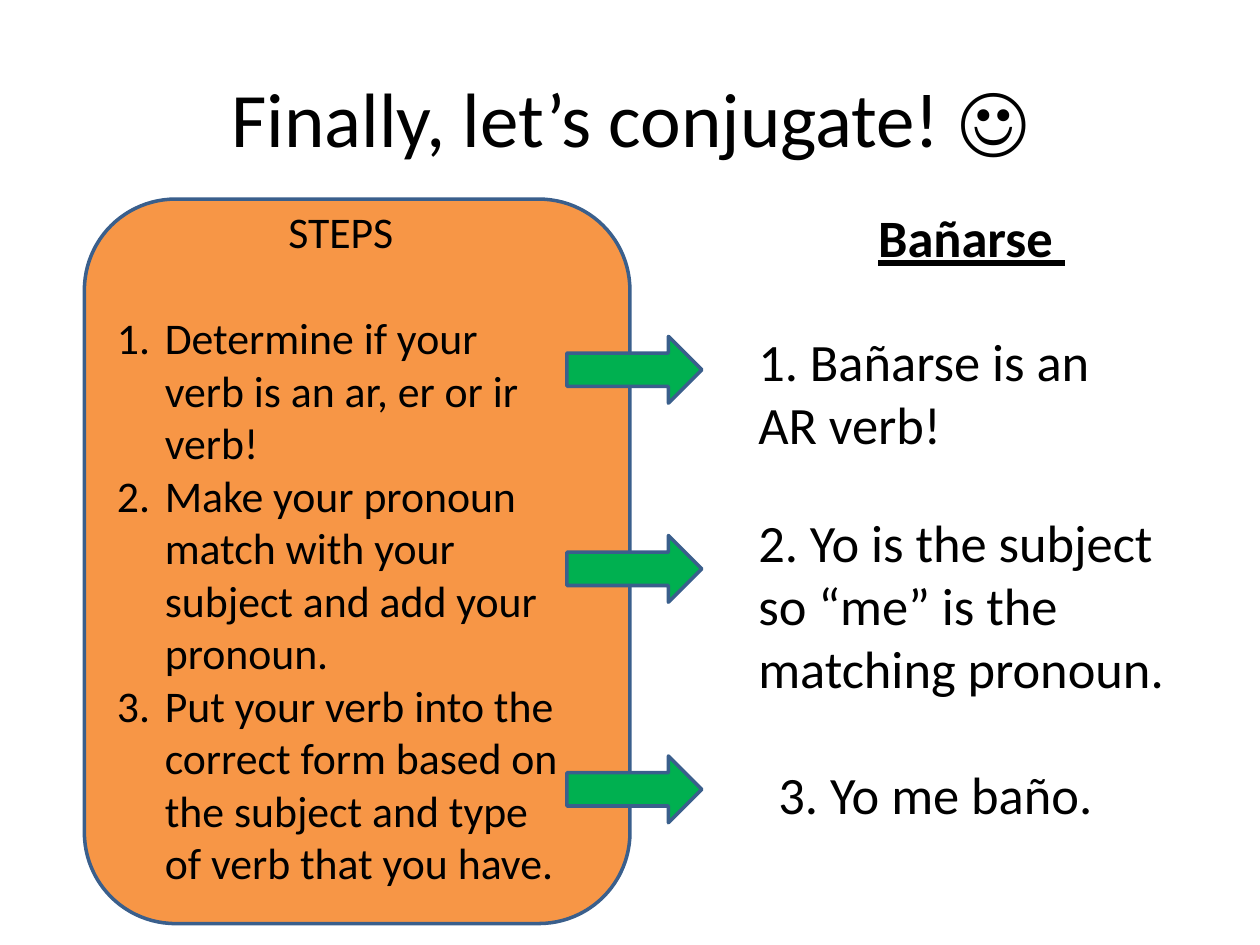
from pptx import Presentation, util as u
from pptx.dml.color import RGBColor
from pptx.enum import shapes, text
from pptx.oxml.xmlchemy import OxmlElement

BLACK = RGBColor(0, 0, 0)
ORANGE = RGBColor(0xF7, 0x96, 0x46)
GREEN = RGBColor(0x00, 0xB0, 0x50)
OUTLINE = RGBColor(0x3A, 0x5F, 0x8C)

CENTER = text.PP_ALIGN.CENTER
LEFT = text.PP_ALIGN.LEFT
TOP = text.MSO_ANCHOR.TOP
BOTTOM = text.MSO_ANCHOR.BOTTOM

STEPS = [
    "Determine if your verb is an ar, er or ir verb!",
    "Make your pronoun match with your subject and add your pronoun.",
    "Put your verb into the correct form based on the subject and type of verb that you have.",
]
ANSWERS = [
    ("1. Bañarse is an AR verb!", (5.92, 2.25, 3, 1.41), BOTTOM),
    ("2. Yo is the subject so “me” is the matching pronoun.", (5.92, 4, 3.5, 1.62), TOP),
    ("3. Yo me baño.", (6.08, 6, 3, 0.61), TOP),
]
ARROW_TOPS = [2.67, 4.25, 6]


class SlideBuilder:
    font = "Calibri"
    line_width = u.Pt(2)

    def __init__(self, slide):
        self.s = slide

    def format(self, p, size, align=LEFT, bold=None, underline=None):
        p.alignment = align
        for r in p.runs:
            f = r.font
            f.name, f.size, f.bold, f.underline = self.font, u.Pt(size), bold, underline
            f.color.rgb = BLACK

    def title(self, words, box):
        sp = self.s.shapes.title
        sp.left, sp.top, sp.width, sp.height = map(u.Inches, box)
        sp.text_frame.text = words
        sp.text_frame.vertical_anchor = text.MSO_ANCHOR.MIDDLE
        self.format(sp.text_frame.paragraphs[0], 44, CENTER)

    def shape(self, kind, box, fill):
        sp = self.s.shapes.add_shape(kind, *map(u.Inches, box))
        sp.shadow.inherit = False
        sp.fill.solid()
        sp.fill.fore_color.rgb = fill
        sp.line.color.rgb = OUTLINE
        sp.line.width = self.line_width

    def text(self, words, box, size=30, anchor=TOP, **style):
        tf = self.s.shapes.add_textbox(*map(u.Inches, box)).text_frame
        tf.word_wrap = True
        tf.vertical_anchor = anchor
        tf.text = words
        self.format(tf.paragraphs[0], size, **style)
        return tf

    def numbered(self, tf, items, size):
        """Append items to a text frame as an automatically numbered list."""
        indent = u.Inches(0.38)
        for item in items:
            p = tf.add_paragraph()
            p.text = item
            self.format(p, size)
            pPr = p._p.get_or_add_pPr()
            pPr.set("marL", str(indent))
            pPr.set("indent", str(-indent))
            number = OxmlElement("a:buAutoNum")
            number.set("type", "arabicPeriod")
            pPr.append(number)


def main():
    prs = Presentation()
    prs.slide_width, prs.slide_height = u.Inches(10), u.Inches(7.5)
    b = SlideBuilder(prs.slides.add_slide(prs.slide_layouts[5]))

    b.title("Finally, let’s conjugate! ☺", (0.5, 0.3, 9, 1.25))

    b.shape(shapes.MSO_SHAPE.ROUNDED_RECTANGLE, (0.67, 1.58, 4.33, 5.75), ORANGE)
    tf = b.text("STEPS", (0.83, 1.58, 3.75, 5.57), 25, align=CENTER)
    tf.paragraphs[0].space_after = u.Pt(30.5)
    b.numbered(tf, STEPS, 25)

    b.text("Bañarse ", (6.25, 1.58, 2.92, 0.61), align=CENTER, bold=True, underline=True)
    for top, (words, box, anchor) in zip(ARROW_TOPS, ANSWERS):
        b.shape(shapes.MSO_SHAPE.RIGHT_ARROW, (4.5, top, 1.07, 0.53), GREEN)
        b.text(words, box, anchor=anchor)

    prs.save("out.pptx")


if __name__ == "__main__":
    main()
